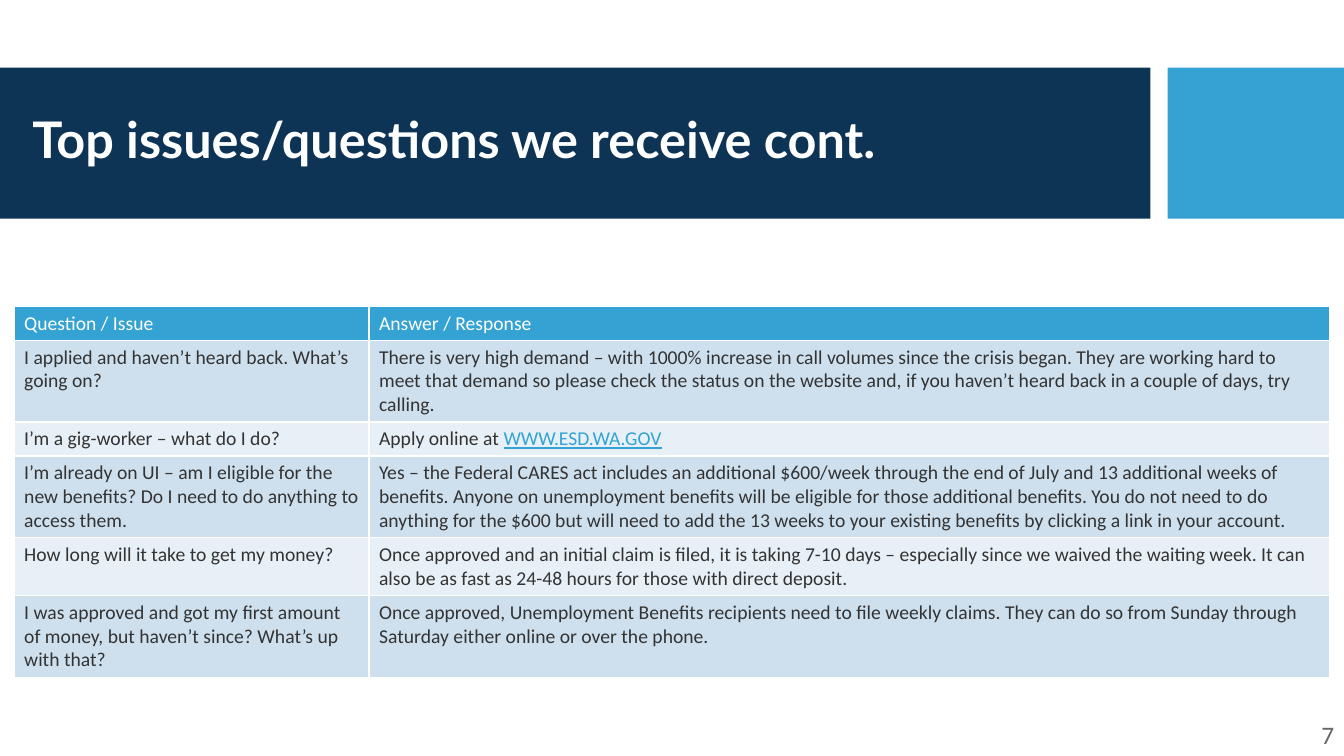
from pptx import Presentation
from pptx import util as u
from pptx.dml.color import RGBColor
from pptx.enum import shapes, text

NAVY = RGBColor(0x0D, 0x34, 0x55)
BLUE = RGBColor(0x34, 0xA2, 0xD2)
LINK = RGBColor(0x32, 0xA3, 0xD3)
PALE = RGBColor(0xCE, 0xE0, 0xEE)
PALER = RGBColor(0xE8, 0xF0, 0xF7)
INK = RGBColor(0x33, 0x33, 0x33)
GREY = RGBColor(0x66, 0x66, 0x66)
WHITE = RGBColor(0xFF, 0xFF, 0xFF)

WIDTH, HEIGHT = 13.33, 7.5
WEBSITE = "WWW.ESD.WA.GOV"
COLUMN_WIDTHS = (3.52, 9.53)
LINE_HEIGHT, CELL_PADDING = 0.236, 0.1
# Each row: question, answer, number of text lines it takes
ROWS = (
    ("Question / Issue", "Answer / Response", 1),
    ("I applied and haven’t heard back. What’s going on?",
     "There is very high demand – with 1000% increase in call volumes since the crisis began. "
     "They are working hard to meet that demand so please check the status on the website and, "
     "if you haven’t heard back in a couple of days, try calling.", 3),
    ("I’m a gig-worker – what do I do?", f"Apply online at {WEBSITE}", 1),
    ("I’m already on UI – am I eligible for the new benefits? "
     "Do I need to do anything to access them.",
     "Yes – the Federal CARES act includes an additional $600/week through the end of July and "
     "13 additional weeks of benefits. Anyone on unemployment benefits will be eligible for those "
     "additional benefits. You do not need to do anything for the $600 but will need to add the "
     "13 weeks to your existing benefits by clicking a link in your account.", 3),
    ("How long will it take to get my money?",
     "Once approved and an initial claim is filed, it is taking 7-10 days – especially since we "
     "waived the waiting week. It can also be as fast as 24-48 hours for those with direct "
     "deposit.", 2),
    ("I was approved and got my first amount of money, but haven’t since? What’s up with that?",
     "Once approved, Unemployment Benefits recipients need to file weekly claims. They can do so "
     "from Sunday through Saturday either online or over the phone.", 3),
)


def set_font(font, name, size, color, bold=False):
    font.name, font.size, font.bold = name, u.Pt(size), bold
    font.color.rgb = color


def add_band(slide, left, top, width, height, color):
    band = slide.shapes.add_shape(shapes.MSO_SHAPE.RECTANGLE, u.Inches(left), u.Inches(top),
                                  u.Inches(width), u.Inches(height))
    band.shadow.inherit = False
    band.fill.solid()
    band.fill.fore_color.rgb = color
    band.line.fill.background()


def add_header(slide, top, height):
    accent_width, gap = 1.75, 0.17
    band_width = WIDTH - accent_width - gap
    add_band(slide, 0, top, band_width, height, NAVY)
    add_band(slide, WIDTH - accent_width, top, accent_width, height, BLUE)

    title = slide.shapes.title
    slide.shapes._spTree.append(title._element)  # bring the title in front of the bands
    title.left, title.top = u.Inches(0.22), u.Inches(top + 0.15)
    title.width, title.height = u.Inches(band_width - 0.37), u.Inches(height - 0.32)
    title.text_frame.text = "Top issues/questions we receive cont."
    title.text_frame.vertical_anchor = text.MSO_ANCHOR.MIDDLE
    paragraph = title.text_frame.paragraphs[0]
    paragraph.alignment = text.PP_ALIGN.LEFT
    paragraph.line_spacing = 0.9
    set_font(paragraph.font, "Lato", 36, WHITE, bold=True)


def fill_cell(cell, words, fill, color):
    cell.fill.solid()
    cell.fill.fore_color.rgb = fill
    paragraph = cell.text_frame.paragraphs[0]
    before, website, _ = words.partition(WEBSITE)
    paragraph.add_run().text = before
    set_font(paragraph.font, "Calibri", 14, color)
    if website:
        run = paragraph.add_run()
        run.text = website
        run.font.underline = True
        run.font.color.rgb = LINK


def add_questions(slide, left, top):
    heights = [lines * LINE_HEIGHT + CELL_PADDING for *_, lines in ROWS]
    table = slide.shapes.add_table(len(ROWS), len(COLUMN_WIDTHS), u.Inches(left), u.Inches(top),
                                   u.Inches(sum(COLUMN_WIDTHS)), u.Inches(sum(heights))).table
    for column, width in zip(table.columns, COLUMN_WIDTHS):
        column.width = u.Inches(width)
    for index, (question, answer, _) in enumerate(ROWS):
        table.rows[index].height = u.Inches(heights[index])
        fill = BLUE if index == 0 else PALE if index % 2 else PALER
        color = WHITE if index == 0 else INK
        for column, words in enumerate((question, answer)):
            fill_cell(table.cell(index, column), words, fill, color)


def add_page_number(slide, width, height):
    box = slide.shapes.add_textbox(u.Inches(WIDTH - width), u.Inches(HEIGHT - height),
                                   u.Inches(width), u.Inches(height))
    box.text_frame.word_wrap = True
    box.text_frame.text = "7"
    paragraph = box.text_frame.paragraphs[0]
    paragraph.alignment = text.PP_ALIGN.RIGHT
    set_font(paragraph.font, "Calibri", 18, GREY)


def main():
    presentation = Presentation()
    presentation.slide_width, presentation.slide_height = u.Inches(WIDTH), u.Inches(HEIGHT)
    slide = presentation.slides.add_slide(presentation.slide_layouts[5])
    add_header(slide, top=0.67, height=1.5)
    add_questions(slide, left=0.14, top=3.04)
    add_page_number(slide, width=0.71, height=0.41)
    presentation.save("out.pptx")


if __name__ == "__main__":
    main()
